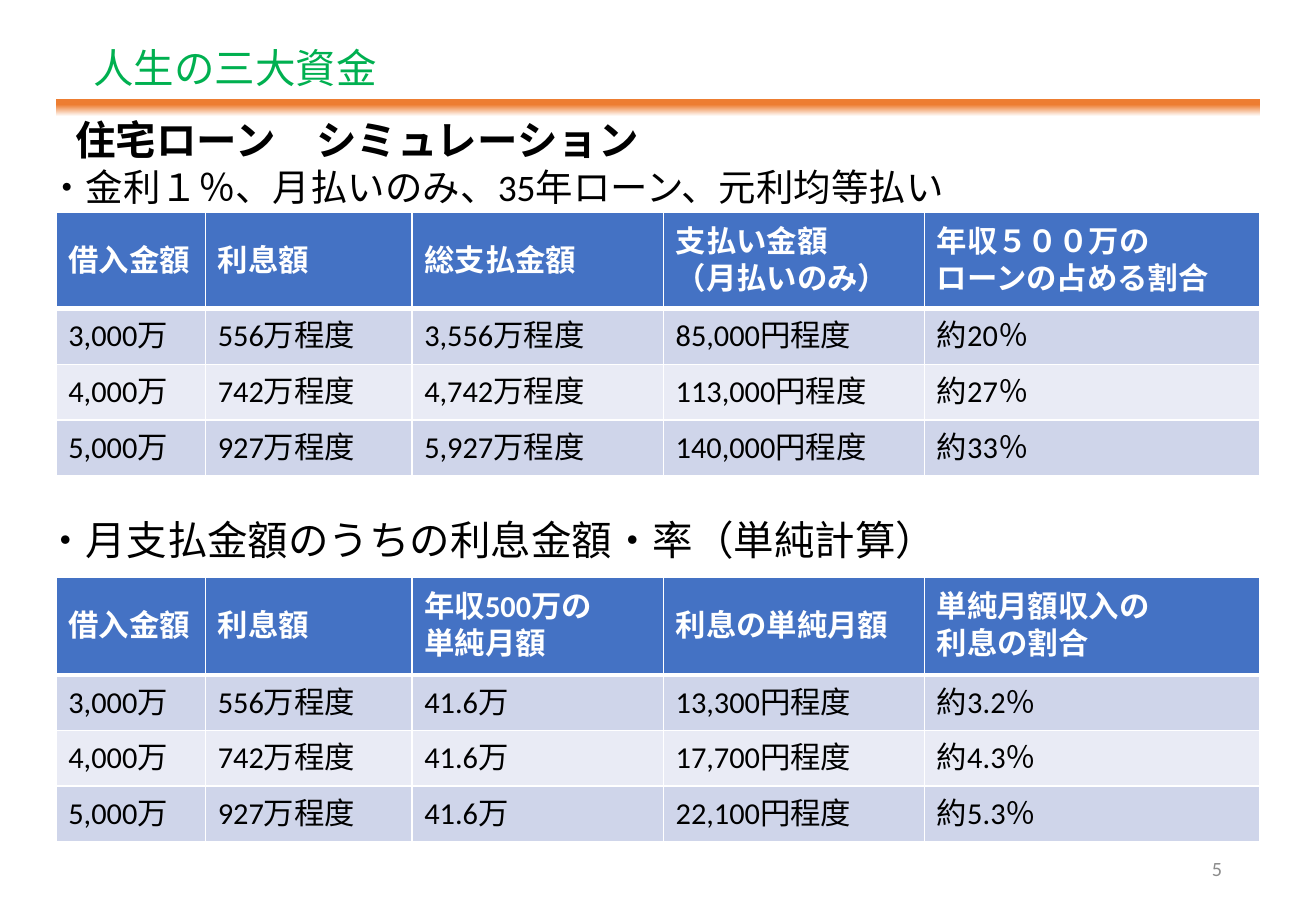
from dataclasses import dataclass

from lxml import etree
from pptx import Presentation
from pptx.dml.color import RGBColor
from pptx.enum.shapes import MSO_SHAPE
from pptx.enum.text import MSO_ANCHOR, MSO_AUTO_SIZE, PP_ALIGN
from pptx.oxml.ns import qn
from pptx.util import Pt

LEFT, CENTER, RIGHT = PP_ALIGN.LEFT, PP_ALIGN.CENTER, PP_ALIGN.RIGHT
TOP, MIDDLE = MSO_ANCHOR.TOP, MSO_ANCHOR.MIDDLE
NO_AUTOFIT = MSO_AUTO_SIZE.NONE
RECTANGLE = MSO_SHAPE.RECTANGLE


@dataclass(frozen=True)
class Theme:
    """Colours, fonts and type sizes of the slide."""
    green: str = "00B050"
    orange: str = "ED7D31"
    blue: str = "4472C4"
    band_dark: str = "CFD5EA"
    band_light: str = "E9EBF5"
    white: str = "FFFFFF"
    black: str = "000000"
    grey: str = "8C8C8C"
    latin: str = "Calibri"
    japanese: str = "Noto Sans CJK JP"
    heading: float = 24
    condition: float = 22.2
    cell: float = 18
    page: float = 12


THEME = Theme()
TABLE_LEFT = 33.3
COLUMN_WIDTHS = (88.6, 122.4, 149, 154.8, 198.7)
BODY_ROW_HEIGHT = 33
LOAN_HEADERS = ("借入金額", "利息額", "総支払金額", "支払い金額\n（月払いのみ）",
                "年収５００万の\nローンの占める割合")
LOAN_ROWS = (
    ("3,000万", "556万程度", "3,556万程度", "85,000円程度", "約20％"),
    ("4,000万", "742万程度", "4,742万程度", "113,000円程度", "約27％"),
    ("5,000万", "927万程度", "5,927万程度", "140,000円程度", "約33％"),
)
INTEREST_HEADERS = ("借入金額", "利息額", "年収500万の\n単純月額", "利息の単純月額",
                    "単純月額収入の\n利息の割合")
INTEREST_ROWS = (
    ("3,000万", "556万程度", "41.6万", "13,300円程度", "約3.2％"),
    ("4,000万", "742万程度", "41.6万", "17,700円程度", "約4.3％"),
    ("5,000万", "927万程度", "41.6万", "22,100円程度", "約5.3％"),
)


def rgb(value):
    """Turn a hex string into a colour."""
    return RGBColor.from_string(value)


def add_run(paragraph, wording, size, color, bold=False, typeface=THEME.latin):
    """Add one formatted run, with one typeface for both scripts."""
    run = paragraph.add_run()
    run.text = wording
    run.font.size = Pt(size)
    run.font.bold = bold
    run.font.color.rgb = rgb(color)
    run.font.name = typeface
    east_asian = etree.Element(qn("a:ea"), typeface=typeface)
    run.font._element.find(qn("a:latin")).addnext(east_asian)


def place(holder, left, top, width, height):
    """Move and size a shape, in points."""
    holder.left, holder.top = Pt(left), Pt(top)
    holder.width, holder.height = Pt(width), Pt(height)


def write_line(holder, wording, size, color, align=CENTER, anchor=MIDDLE,
               spaced=True, **font):
    """Write a one-line paragraph into a text box or placeholder."""
    frame = holder.text_frame
    frame.word_wrap = True
    frame.auto_size = NO_AUTOFIT
    frame.vertical_anchor = anchor
    paragraph = frame.paragraphs[0]
    paragraph.alignment = align
    paragraph.line_spacing = 0.9 if spaced else 1.0
    paragraph.space_before = Pt(10 if spaced else 0)
    add_run(paragraph, wording, size, color, **font)


def add_label(slide, box, wording, size, color, **style):
    """Add a text box holding one line."""
    label = slide.shapes.add_textbox(*map(Pt, box))
    write_line(label, wording, size, color, **style)


def add_title_rule(slide):
    """Add the bar that fades from orange to white below the title."""
    rule = slide.shapes.add_shape(RECTANGLE, Pt(TABLE_LEFT), Pt(59), Pt(713.5), Pt(11.5))
    rule.shadow.inherit = False
    rule.line.fill.background()
    rule.fill.gradient()
    rule.fill.gradient_angle = 90
    fade = ((0.13, THEME.white), (0.73, THEME.orange))
    for stop, (position, color) in zip(rule.fill.gradient_stops, fade):
        stop.position = position
        stop.color.rgb = rgb(color)


def set_borders(cell, bottom):
    """Draw white cell borders with the given bottom width."""
    properties = cell._tc.get_or_add_tcPr()
    sides = (("L", 1), ("R", 1), ("T", 1), ("B", bottom))
    for index, (side, width) in enumerate(sides):
        border = etree.Element(qn(f"a:ln{side}"), w=str(Pt(width)))
        fill = etree.SubElement(border, qn("a:solidFill"))
        etree.SubElement(fill, qn("a:srgbClr"), val=THEME.white)
        properties.insert(index, border)


def fill_cell(cell, wording, background, color, bold, bottom):
    """Write and format one table cell."""
    cell.vertical_anchor = MIDDLE
    cell.fill.solid()
    cell.fill.fore_color.rgb = rgb(background)
    set_borders(cell, bottom)
    frame = cell.text_frame
    for index, line in enumerate(wording.split("\n")):
        paragraph = frame.add_paragraph() if index else frame.paragraphs[0]
        add_run(paragraph, line, THEME.cell, color, bold)


def add_loan_table(slide, top, header_height, headers, rows):
    """Add a table with a blue header and banded rows."""
    heights = [header_height] + [BODY_ROW_HEIGHT] * len(rows)
    table = slide.shapes.add_table(
        len(heights), len(headers), Pt(TABLE_LEFT), Pt(top),
        Pt(sum(COLUMN_WIDTHS)), Pt(sum(heights))).table
    for column, width in zip(table.columns, COLUMN_WIDTHS):
        column.width = Pt(width)
    for r, (height, values) in enumerate(zip(heights, (headers, *rows))):
        table.rows[r].height = Pt(height)
        band = THEME.band_dark if r % 2 else THEME.band_light
        style = (band, THEME.black, False, 1) if r else (THEME.blue, THEME.white, True, 3)
        for c, wording in enumerate(values):
            fill_cell(table.cell(r, c), wording, *style)


def main():
    """Build the slide and save it."""
    deck = Presentation()
    deck.slide_width, deck.slide_height = Pt(780), Pt(540)
    slide = deck.slides.add_slide(deck.slide_layouts[0])
    title, subtitle = slide.placeholders

    place(title, 48.2, 21.6, 410, 36)
    write_line(title, "人生の三大資金", THEME.heading, THEME.green, align=LEFT,
               anchor=TOP, spaced=False, typeface=THEME.japanese)
    add_title_rule(slide)
    place(subtitle, 33.3, 65.5, 356.4, 37.4)
    write_line(subtitle, "住宅ローン　シミュレーション", THEME.heading, THEME.black, bold=True)

    add_label(slide, (3, 93.6, 582, 37.4), "・金利１％、月払いのみ、35年ローン、元利均等払い",
              THEME.condition, THEME.black)
    add_loan_table(slide, 126, 57, LOAN_HEADERS, LOAN_ROWS)
    add_label(slide, (0, 296, 582, 51), "・月支払金額のうちの利息金額・率（単純計算）",
              THEME.heading, THEME.black)
    add_loan_table(slide, 342, 58, INTEREST_HEADERS, INTEREST_ROWS)
    add_label(slide, (702, 500.4, 29.5, 28.8), "5", THEME.page, THEME.grey,
              align=RIGHT, spaced=False)
    deck.save("out.pptx")


if __name__ == "__main__":
    main()
